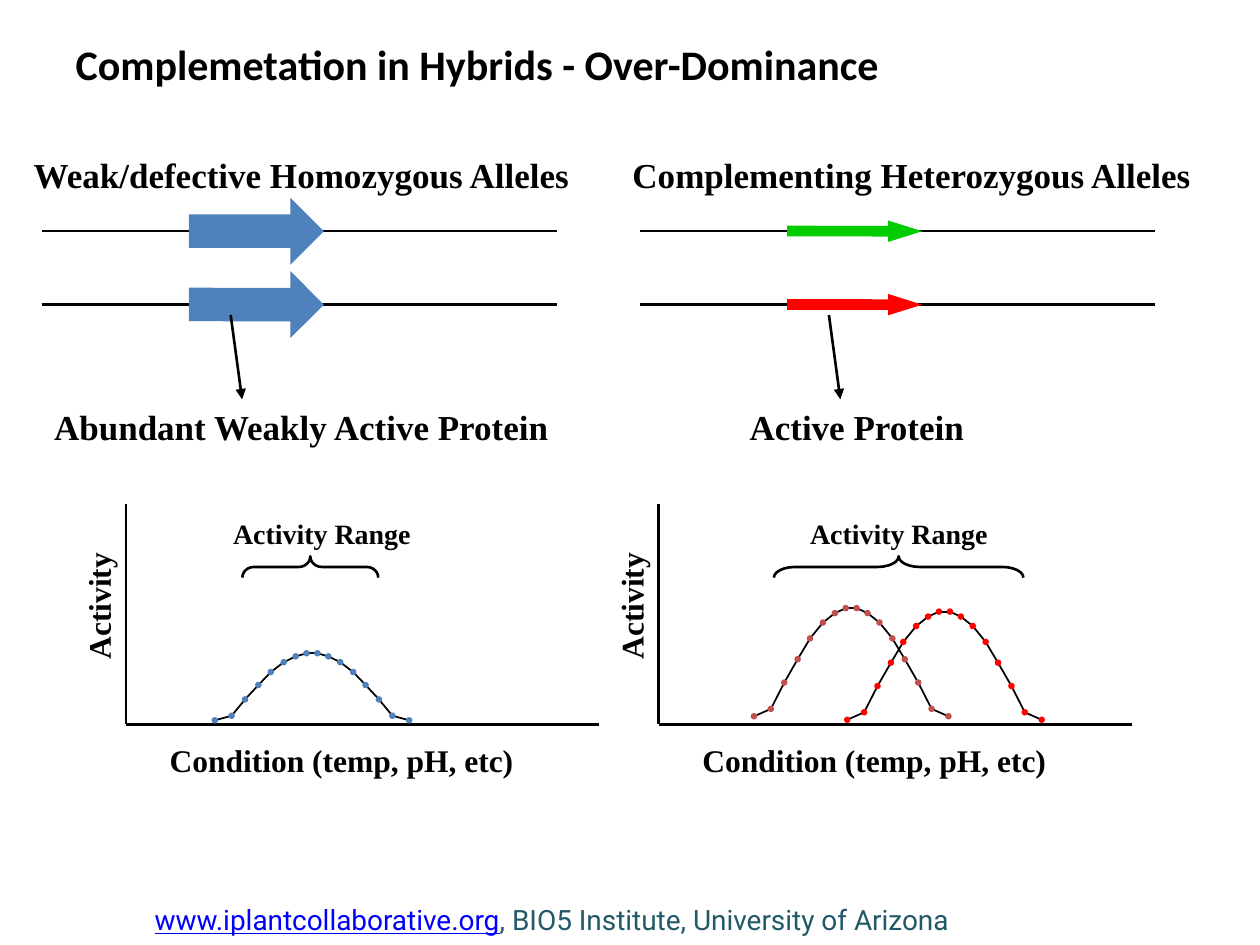
"""Build a slide comparing homozygous and heterozygous alleles and their activity ranges."""
from lxml import etree
from pptx import Presentation
from pptx.dml.color import RGBColor
from pptx.enum.shapes import MSO_CONNECTOR, MSO_SHAPE
from pptx.enum.text import MSO_ANCHOR, PP_ALIGN
from pptx.oxml.ns import qn
from pptx.util import Cm, Pt

STRAIGHT = MSO_CONNECTOR.STRAIGHT
ARROW, BRACE, DOT = MSO_SHAPE.RIGHT_ARROW, MSO_SHAPE.LEFT_BRACE, MSO_SHAPE.OVAL
TOP, MIDDLE = MSO_ANCHOR.TOP, MSO_ANCHOR.MIDDLE
LEFT = PP_ALIGN.LEFT
SERIF = "Times New Roman"
rgb = RGBColor.from_string


def add_text(sp, text, size=18, font=SERIF, bold=True, color="000000",
             underline=False, wrap=True, anchor=TOP, spacing=1.0):
    """Append a formatted run to the first paragraph of a shape."""
    tf = sp.text_frame
    tf.word_wrap = wrap
    tf.vertical_anchor = anchor
    p = tf.paragraphs[0]
    p.alignment = LEFT
    p.line_spacing = spacing
    r = p.add_run()
    r.text = text
    r.font.size = Pt(size)
    r.font.name = font
    r.font.bold = bold
    r.font.underline = underline
    r.font.color.rgb = rgb(color)


def add_line(shapes, x1, y1, x2, y2, width=1.5, head=False):
    """Draw a black straight line, with an arrowhead at its end if asked."""
    c = shapes.add_connector(STRAIGHT, Cm(x1), Cm(y1), Cm(x2), Cm(y2))
    c.line.color.rgb = rgb("000000")
    c.line.width = Pt(width)
    if head:
        etree.SubElement(c.line._get_or_add_ln(), qn("a:tailEnd"), type="triangle")
    etree.SubElement(c._element.spPr, qn("a:effectLst"))


prs = Presentation()
prs.slide_width, prs.slide_height = Cm(25.4), Cm(19.05)
s = prs.slides.add_slide(prs.slide_layouts[5])

title = s.shapes.title
title.left, title.top, title.width, title.height = Cm(1.27), Cm(0.76), Cm(22.86), Cm(3.18)
add_text(title, "Complemetation in Hybrids - Over-Dominance", size=24, font="Calibri", spacing=0.9)

footer = s.shapes.add_textbox(Cm(2.87), Cm(18.03), Cm(17.55), Cm(1.02))
add_text(footer, "www.iplantcollaborative.org", size=16, font="Roboto", bold=False,
         color="0000FF", underline=True, anchor=MIDDLE)
add_text(footer, ", BIO5 Institute, University of Arizona", size=16, font="Roboto",
         bold=False, color="215968", anchor=MIDDLE)

allele_panels = [
    (0.84, 0.43, "Weak/defective Homozygous Alleles", ("4F81BD", "4F81BD"), 1.35, 0.5,
     0.84, 10.57, "Abundant Weakly Active Protein"),
    (12.9, 12.5, "Complementing Heterozygous Alleles", ("00CC00", "FF0000"), 0.43, 1.59,
     14.86, 4.9, "Active Protein"),
]
for x, head_x, heading, colors, height, tip, protein_x, protein_w, protein in allele_panels:
    sp = s.shapes.add_textbox(Cm(head_x), Cm(2.97), Cm(12.5), Cm(1.09))
    add_text(sp, heading, size=20)
    for y, color in zip((4.66, 6.14), colors):
        add_line(s.shapes, x, y, x + 10.39, y)
        gene = s.shapes.add_shape(ARROW, Cm(x + 2.97), Cm(y - height / 2), Cm(2.72), Cm(height))
        gene.adjustments[0], gene.adjustments[1] = 0.5, tip
        gene.rotation = 0.1
        gene.shadow.inherit = False
        gene.fill.solid()
        gene.fill.fore_color.rgb = rgb(color)
        gene.line.fill.background()
    add_line(s.shapes, x + 3.81, 6.35, x + 4.04, 8.05, head=True)
    sp = s.shapes.add_textbox(Cm(protein_x), Cm(8.05), Cm(protein_w), Cm(1.1))
    add_text(sp, protein, size=20, wrap=False)

plots = [(2.54, 4.45, 6.26, 2.74, 0.54), (13.28, 16.08, 18.12, 5.03, 0.99)]
for x, range_x, brace_x, span, curl in plots:
    add_line(s.shapes, x, 10.16, x, 14.6)
    add_line(s.shapes, x, 14.6, x + 9.53, 14.6)
    sp = s.shapes.add_textbox(Cm(x - 2.03), Cm(11.56), Cm(2.95), Cm(1.02))
    sp.rotation = 270
    add_text(sp, "Activity")
    sp = s.shapes.add_textbox(Cm(x + 0.63), Cm(14.81), Cm(7.62), Cm(1.02))
    add_text(sp, "Condition (temp, pH, etc)")
    sp = s.shapes.add_textbox(Cm(range_x), Cm(10.29), Cm(5.51), Cm(0.94))
    add_text(sp, "Activity Range", size=16)
    brace = s.shapes.add_shape(BRACE, Cm(brace_x - 0.22), Cm(11.43 - span / 2), Cm(0.43), Cm(span))
    brace.adjustments[0], brace.adjustments[1] = curl, 0.5
    brace.rotation = 90
    brace.shadow.inherit = False
    brace.fill.background()
    brace.line.color.rgb = rgb("000000")
    brace.line.width = Pt(1.5)

offsets = [0.11, 0.33, 0.57, 0.83, 1.08, 1.35, 1.62, 1.96]
drops = [0, 0.1, 0.29, 0.61, 1.03, 1.5, 2.03, 2.18]
half = list(zip(offsets, drops))
bell = [(-dx, dy) for dx, dy in reversed(half)] + half
size = 0.13
curves = [(6.29, 13.17, 0.62, "4F81BD"), (17.16, 12.26, 1, "C0504D"), (19.04, 12.33, 1, "FF0000")]
for center, peak, scale, color in curves:
    curve = s.shapes.add_group_shape()
    points = [(center + dx, peak + dy * scale) for dx, dy in bell]
    for start, end in zip(points, points[1:]):
        add_line(curve.shapes, *start, *end, width=1)
    for x, y in points:
        dot = curve.shapes.add_shape(DOT, Cm(x - size / 2), Cm(y - size / 2), Cm(size), Cm(size))
        dot.shadow.inherit = False
        dot.fill.solid()
        dot.fill.fore_color.rgb = rgb(color)
        dot.line.fill.background()

prs.save("out.pptx")
